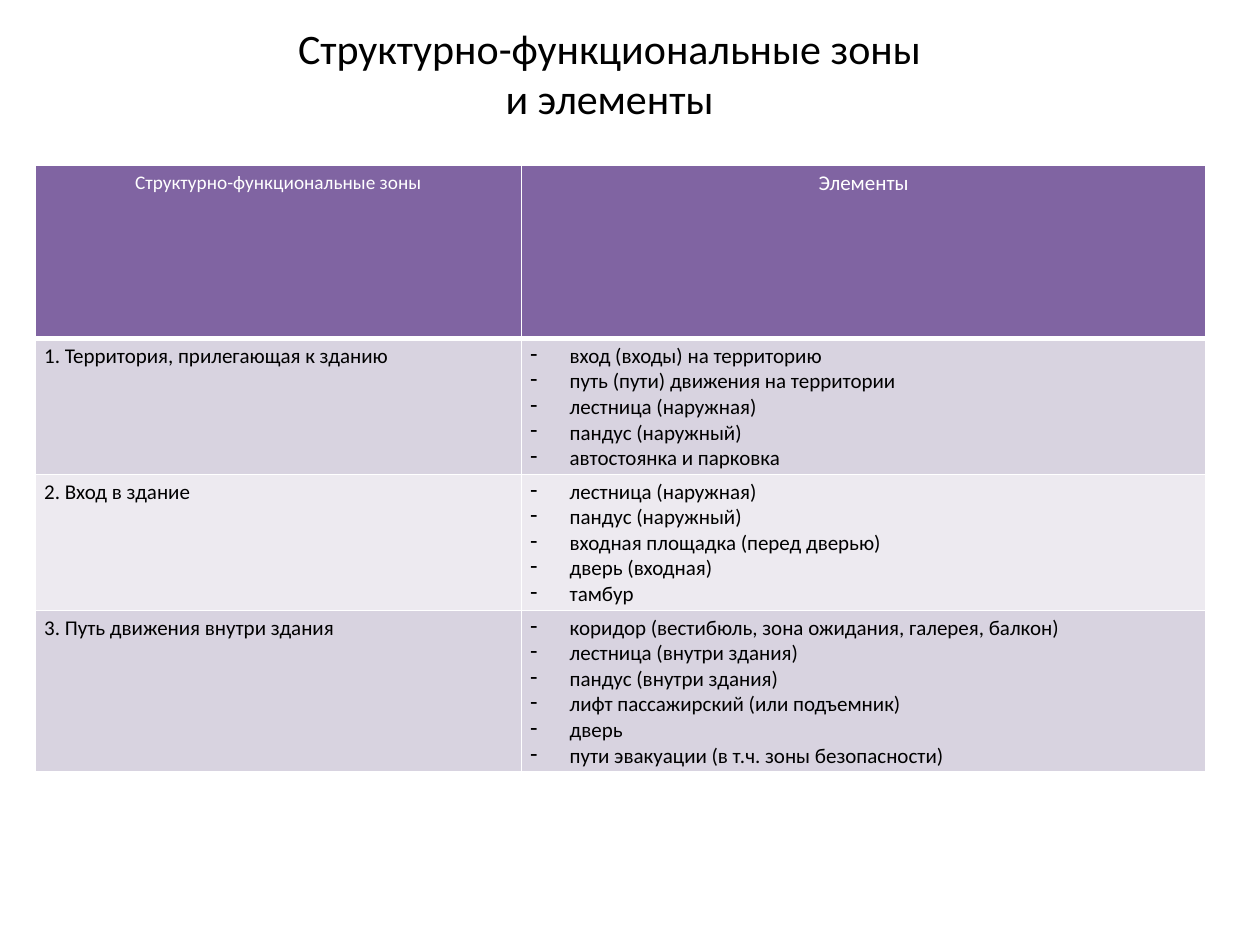
from lxml import etree
from pptx import Presentation
from pptx.dml.color import RGBColor
from pptx.enum.text import MSO_ANCHOR, PP_ALIGN
from pptx.oxml.ns import qn
from pptx.util import Cm, Pt

LEFT, CENTER = PP_ALIGN.LEFT, PP_ALIGN.CENTER
MIDDLE = MSO_ANCHOR.MIDDLE

THEME = {
    "font": "Calibri",
    "title": 24, "head": 11, "body": 12,
    "dark": "000000", "light": "FFFFFF",
    "fill": "8064A2", "bands": ("D8D3E0", "EDEAF0"),
    "line": 1, "rule": 3,
}

TITLE = "Структурно-функциональные зоны \vи элементы "
HEADS = [("Структурно-функциональные зоны", THEME["head"]),
         ("Элементы", THEME["body"])]
ZONES = [
    ("1. Территория, прилегающая к зданию", [
        "вход (входы) на территорию",
        "путь (пути) движения на территории",
        "лестница (наружная)",
        "пандус (наружный)",
        "автостоянка и парковка"]),
    ("2. Вход в здание", [
        "лестница (наружная)",
        "пандус (наружный)",
        "входная площадка (перед дверью)",
        "дверь (входная)",
        "тамбур"]),
    ("3. Путь движения внутри здания", [
        "коридор (вестибюль, зона ожидания, галерея, балкон)",
        "лестница (внутри здания)",
        "пандус (внутри здания)",
        "лифт пассажирский (или подъемник)",
        "дверь",
        "пути эвакуации (в т.ч. зоны безопасности)"]),
]
COLS = (3.86 * 2.54, 5.43 * 2.54)
ROWS = (3.48, 2.72, 2.72, 3.23)
INDENT = Cm(0.79)


def write(frame, lines, size=THEME["body"], color=THEME["dark"],
          align=LEFT, bullet=None):
    """Fill a text frame with one paragraph per line."""
    for i, line in enumerate(lines):
        para = frame.add_paragraph() if i else frame.paragraphs[0]
        para.text = line
        para.alignment = align
        for run in para.runs:
            font = run.font
            font.name, font.size, font.bold = THEME["font"], Pt(size), False
            font.color.rgb = RGBColor.from_string(color)
        if bullet:
            props = para._p.get_or_add_pPr()
            props.set("marL", str(INDENT))
            props.set("indent", str(-INDENT))
            etree.SubElement(props, qn("a:buChar"), char=bullet)


def paint(cell, fill, base=THEME["line"]):
    """Set margins, borders (base is the bottom width) and fill."""
    cell.margin_left = cell.margin_right = Cm(0.18)
    cell.margin_top = cell.margin_bottom = Cm(0.1)
    props = cell._tc.get_or_add_tcPr()
    for side in "LRTB":
        width = base if side == "B" else THEME["line"]
        line = etree.SubElement(props, qn(f"a:ln{side}"), w=str(Pt(width)))
        solid = etree.SubElement(line, qn("a:solidFill"))
        etree.SubElement(solid, qn("a:srgbClr"), val=THEME["light"])
    cell.fill.solid()
    cell.fill.fore_color.rgb = RGBColor.from_string(fill)


def main():
    deck = Presentation()
    deck.slide_width, deck.slide_height = Cm(25.4), Cm(19.05)
    slide = deck.slides.add_slide(deck.slide_layouts[6])

    box = slide.shapes.add_textbox(Cm(3.1), Cm(0.13), Cm(18.57), Cm(2.67))
    box.text_frame.word_wrap = True
    box.text_frame.vertical_anchor = MIDDLE
    write(box.text_frame, [TITLE], size=THEME["title"], align=CENTER)

    table = slide.shapes.add_table(
        len(ROWS), len(COLS), Cm(0.71), Cm(3.34),
        Cm(sum(COLS)), Cm(sum(ROWS))).table
    for col, width in zip(table.columns, COLS):
        col.width = Cm(width)
    for row, height in zip(table.rows, ROWS):
        row.height = Cm(height)

    for c, (head, size) in enumerate(HEADS):
        cell = table.cell(0, c)
        write(cell.text_frame, [head], size=size, color=THEME["light"],
              align=CENTER)
        paint(cell, THEME["fill"], base=THEME["rule"])
    for r, (zone, parts) in enumerate(ZONES):
        name, items = table.cell(r + 1, 0), table.cell(r + 1, 1)
        write(name.text_frame, [zone])
        write(items.text_frame, parts, bullet="-")
        for cell in (name, items):
            paint(cell, THEME["bands"][r % 2])

    deck.save("out.pptx")


if __name__ == "__main__":
    main()
